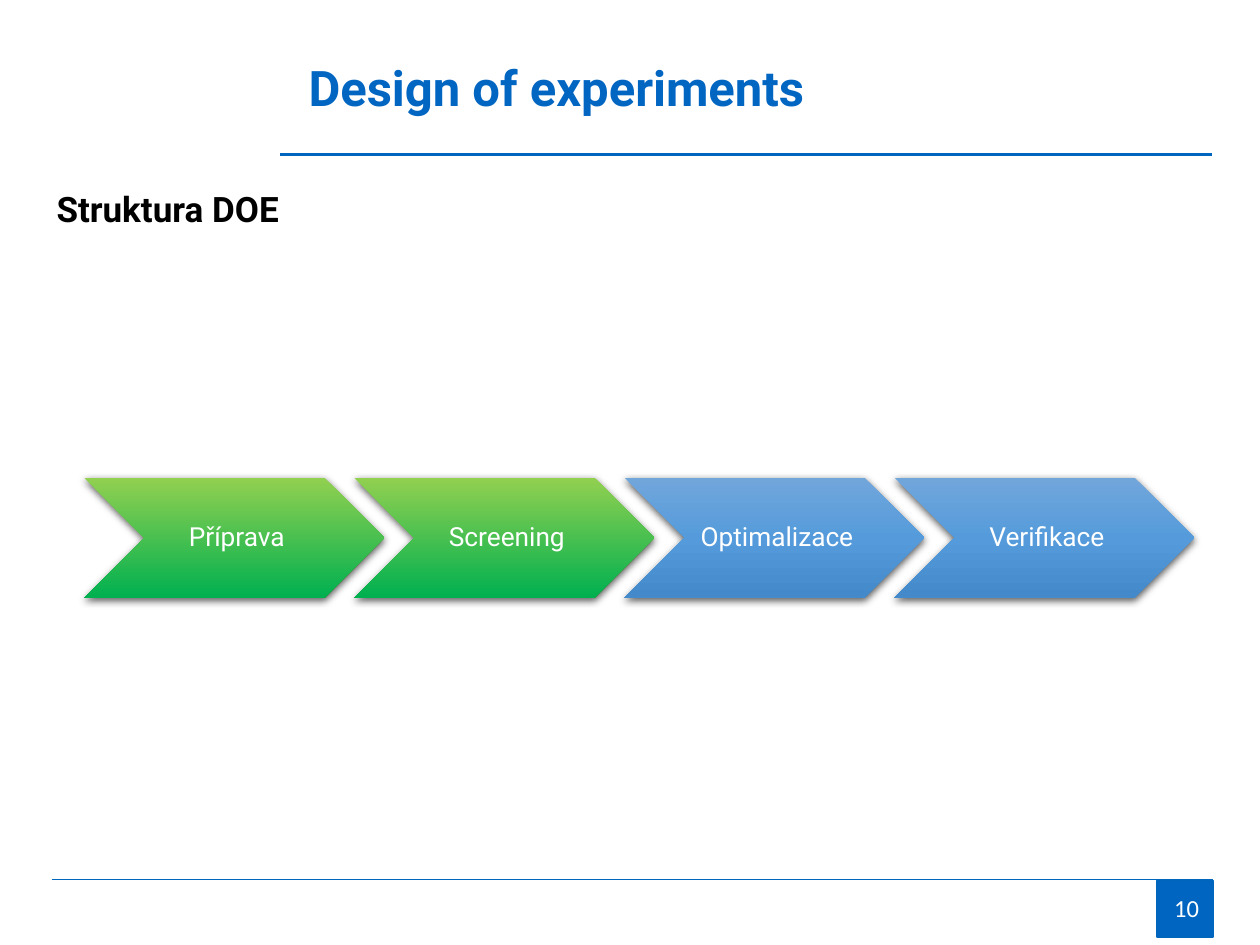
from lxml.etree import SubElement
from pptx import Presentation
from pptx.dml.color import RGBColor
from pptx.enum.shapes import MSO_CONNECTOR, MSO_SHAPE
from pptx.enum.text import MSO_ANCHOR, PP_ALIGN
from pptx.oxml.ns import qn
from pptx.util import Cm, Pt

BLUE = "0065BD"
GREENS = ["92D050", "00B050"]
BLUES = ["71A6DB", "559BDB", "448ACA"]
STEPS = [("Příprava", GREENS), ("Screening", GREENS),
         ("Optimalizace", BLUES), ("Verifikace", BLUES)]


def color(code):
    return RGBColor.from_string(code)


def write(shape, text, size, code, pads=None, bold=False, align=PP_ALIGN.LEFT,
          font="Roboto"):
    frame = shape.text_frame
    frame.word_wrap = True
    for side, pad in (pads or {}).items():
        setattr(frame, f"margin_{side}", Cm(pad))
    para = frame.paragraphs[0]
    para.alignment = align
    run = para.add_run()
    run.text = text
    looks = {"name": font, "size": Pt(size), "bold": bold}
    for key, value in looks.items():
        setattr(run.font, key, value)
    run.font.color.rgb = color(code)
    return frame


def add_text(slide, box, *args, **opts):
    shape = slide.shapes.add_textbox(*map(Cm, box))
    return write(shape, *args, **opts)


def add_rule(slide, left, right, top, width):
    line = slide.shapes.add_connector(
        MSO_CONNECTOR.STRAIGHT, Cm(left), Cm(top), Cm(right), Cm(top))
    line.line.color.rgb = color(BLUE)
    line.line.width = Pt(width)
    SubElement(line._element.spPr, qn("a:effectLst"))


def shade(shape, codes):
    # Vertical gradient with evenly spaced stops
    shape.fill.gradient()
    shape.fill.gradient_angle = 270
    props = shape._element.spPr
    stops = props.find(".//" + qn("a:gsLst"))
    stops.clear()
    for i, code in enumerate(codes):
        pos = str(100000 * i // (len(codes) - 1))
        stop = SubElement(stops, qn("a:gs"), pos=pos)
        SubElement(stop, qn("a:srgbClr"), val=code)
    # Soft shadow straight below
    shape.line.fill.background()
    shape.shadow.inherit = False
    drop = SubElement(props.find(qn("a:effectLst")), qn("a:outerShdw"),
                      blurRad=str(Pt(4.5)), dist=str(Pt(1.5)),
                      dir="5400000", rotWithShape="0")
    tint = SubElement(drop, qn("a:srgbClr"), val="000000")
    SubElement(tint, qn("a:alpha"), val="63000")


def add_header(slide, left, top, width, height):
    add_text(slide, (left + 0.33, top, width - 0.33, height),
             "Design of experiments", 28, "0165C2", bold=True)
    add_rule(slide, left, left + width, top + 2.08, 1.5)


def add_body(slide, left, top, width, height):
    add_text(slide, (left, top, width, height), "Struktura DOE", 20, "000000",
             pads={"left": 0.76}, bold=True)


def add_steps(slide, left, top, width, height):
    # Each chevron overlaps the next by a tenth of its width
    size = width / (1 + 0.9 * (len(STEPS) - 1))
    pads = {"left": 0.16, "right": 0.06, "top": 0.05, "bottom": 0.05}
    for i, (name, codes) in enumerate(STEPS):
        box = (left + 0.9 * size * i, top, size, height)
        shape = slide.shapes.add_shape(MSO_SHAPE.CHEVRON, *map(Cm, box))
        shade(shape, codes)
        frame = write(shape, name, 15, "FFFFFF", pads, align=PP_ALIGN.CENTER)
        frame.vertical_anchor = MSO_ANCHOR.MIDDLE
        frame.paragraphs[0].line_spacing = 0.9


def add_footer(slide, left, top, width, side):
    add_rule(slide, left, left + width, top, 1)
    # Page number tile
    edge = left + width - side
    tile = slide.shapes.add_shape(
        MSO_SHAPE.RECTANGLE, *map(Cm, (edge, top + 0.02, side, side)))
    tile.shadow.inherit = False
    tile.fill.solid()
    tile.fill.fore_color.rgb = color("0065C0")
    tile.line.color.rgb = color(BLUE)
    tile.line.width = Pt(1)
    add_text(slide, (edge + 0.03, top + 0.15, side, 0.86), "10", 14, "FFFFFF",
             align=PP_ALIGN.CENTER, font="Calibri")


def main():
    deck = Presentation()
    deck.slide_width, deck.slide_height = Cm(25.4), Cm(19.05)
    slide = deck.slides.add_slide(deck.slide_layouts[6])
    add_body(slide, 0.38, 3.66, 24.69, 13.92)
    add_header(slide, 5.64, 1.04, 18.8, 1.88)
    add_footer(slide, 1.04, 17.73, 23.42, 1.14)
    add_steps(slide, 1.7, 9.63, 22.38, 2.42)
    deck.save("out.pptx")


if __name__ == "__main__":
    main()
